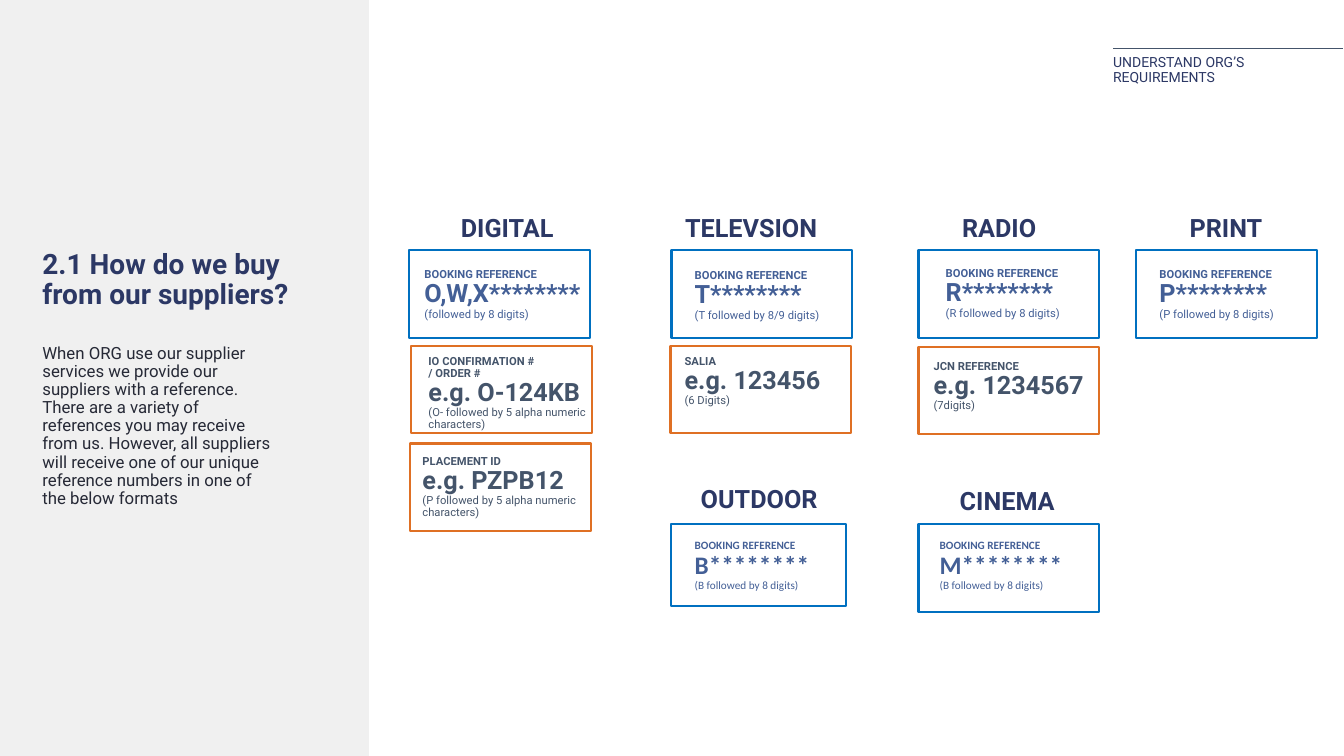
"""Build the slide on supplier booking references."""
from copy import deepcopy
from dataclasses import dataclass

from lxml import etree
from pptx import Presentation
from pptx.dml.color import RGBColor
from pptx.enum.shapes import MSO_CONNECTOR, MSO_SHAPE
from pptx.enum.text import MSO_ANCHOR, MSO_AUTO_SIZE, PP_ALIGN
from pptx.oxml.ns import qn
from pptx.slide import Slide
from pptx.text.text import TextFrame
from pptx.util import Inches, Pt

LINE = MSO_CONNECTOR.STRAIGHT
RECT = MSO_SHAPE.RECTANGLE
TOP, MIDDLE = MSO_ANCHOR.TOP, MSO_ANCHOR.MIDDLE
LEFT, CENTER = PP_ALIGN.LEFT, PP_ALIGN.CENTER
FIXED = MSO_AUTO_SIZE.NONE

NAVY = RGBColor(0x2C, 0x38, 0x65)
INK = RGBColor(0x26, 0x29, 0x36)
SLATE = RGBColor(0x44, 0x54, 0x6A)
STEEL = RGBColor(0x43, 0x5F, 0x96)
BLUE = RGBColor(0x00, 0x70, 0xC0)
ORANGE = RGBColor(0xDF, 0x70, 0x24)
GREY = RGBColor(0xF0, 0xF0, 0xF0)


@dataclass
class Head:
    """A media heading and its place."""
    text: str
    x: float
    y: float = 2.14


@dataclass
class Card:
    """A framed reference with its label, code and note."""
    label: str
    code: str
    note: str
    x: float
    y: float
    text_x: float
    text_y: float
    edge: RGBColor = BLUE
    ink: RGBColor = STEEL
    font: str = "Roboto"
    width: float = 1.79
    height: float = 0.87


HEADS = [
    Head("DIGITAL", 4.33), Head("TELEVSION", 6.75),
    Head("RADIO", 9.21), Head("PRINT", 11.46),
    Head("OUTDOOR", 6.83, 4.83), Head("CINEMA", 9.29, 4.85),
]
RULES = [4.31, 6.73, 9.2, 11.44]
BOOK = "BOOKING REFERENCE"
CARDS = [
    Card(BOOK, "O,W,X********", "(followed by 8 digits)", 4.06, 2.48, 4.21, 2.67),
    Card(BOOK, "T********", "(T followed by 8/9 digits)", 6.66, 2.48, 6.89, 2.68),
    Card(BOOK, "R********", "(R followed by 8 digits)", 9.11, 2.48, 9.38, 2.66),
    Card(BOOK, "P********", "(P followed by 8 digits)", 11.27, 2.48, 11.5, 2.67),
    Card("IO CONFIRMATION #\v/ ORDER #", "e.g. O-124KB",
         "(O- followed by 5 alpha numeric characters)",
         4.08, 3.43, 4.25, 3.53, ORANGE, SLATE),
    Card("SALIA", "e.g. 123456", "(6 Digits)",
         6.65, 3.43, 6.79, 3.53, ORANGE, SLATE),
    Card("JCN REFERENCE", "e.g. 1234567", "(7digits)",
         9.11, 3.44, 9.26, 3.58, ORANGE, SLATE),
    Card("PLACEMENT ID", "e.g. PZPB12",
         "(P followed by 5 alpha numeric characters)",
         4.07, 4.4, 4.19, 4.52, ORANGE, SLATE),
    Card(BOOK, "B********", "(B followed by 8 digits)",
         6.66, 5.2, 6.89, 5.36, font="Calibri", width=1.73, height=0.81),
    Card(BOOK, "M********", "(B followed by 8 digits)",
         9.11, 5.2, 9.32, 5.36, font="Calibri"),
]
BODY = (
    "When ORG use our supplier services we provide our suppliers with a "
    "reference. There are a variety of references you may receive from us. "
    "However, all suppliers will receive one of our unique reference numbers "
    "in one of the below formats"
)


def write(frame: TextFrame, text: str, size: float, ink: RGBColor,
          bold: bool = False, align: PP_ALIGN = LEFT,
          anchor: MSO_ANCHOR = TOP, font: str = "Roboto") -> None:
    """Fill a frame with one paragraph of formatted text."""
    frame.text = text
    frame.word_wrap = True
    frame.auto_size = FIXED
    frame.vertical_anchor = anchor
    frame.margin_left = frame.margin_right = 0
    frame.margin_top = frame.margin_bottom = 0
    para = frame.paragraphs[0]
    para.alignment = align
    para.line_spacing = 0.9
    para.space_before = Pt(6)
    for run in para.runs:
        run.font.name = font
        run.font.size = Pt(size)
        run.font.bold = bold
        run.font.color.rgb = ink


def add_text(slide: Slide, x: float, y: float, w: float, h: float) -> TextFrame:
    """Add a text box and return its frame."""
    box = slide.shapes.add_textbox(Inches(x), Inches(y), Inches(w), Inches(h))
    return box.text_frame


def add_rule(slide: Slide, x: float, y: float, end: float, ink: RGBColor) -> None:
    """Draw a thin level line."""
    rule = slide.shapes.add_connector(
        LINE, Inches(x), Inches(y), Inches(end), Inches(y))
    rule.line.color.rgb = ink
    rule.line.width = Pt(0.5)
    etree.SubElement(rule._element.spPr, qn("a:effectLst"))


def add_card(slide: Slide, card: Card) -> None:
    """Draw a reference with its frame."""
    frame = add_text(slide, card.text_x, card.text_y, 1.83, 0.68)
    text = "\v".join([card.label, card.code, card.note])
    write(frame, text, 8, card.ink, True, font=card.font)
    para = frame.paragraphs[0]
    para.space_after = Pt(3.4)
    code, note = para.runs[-2:]
    code.font.size = Pt(18)
    note.font.bold = False
    for gap in para._p.findall(qn("a:br")):
        gap.append(deepcopy(gap.getprevious().find(qn("a:rPr"))))
    edge = slide.shapes.add_shape(
        RECT, Inches(card.x), Inches(card.y),
        Inches(card.width), Inches(card.height))
    edge.shadow.inherit = False
    edge.fill.background()
    edge.line.color.rgb = card.edge
    edge.line.width = Pt(1.5)


def add_side(slide: Slide) -> None:
    """Draw the side panel with title and body."""
    panel = slide.shapes.add_shape(RECT, 0, 0, Inches(3.66), Inches(7.5))
    panel.shadow.inherit = False
    panel.fill.solid()
    panel.fill.fore_color.rgb = GREY
    panel.line.fill.background()
    slide.shapes._spTree.insert(2, panel._element)

    title, body = slide.shapes.title, slide.placeholders[1]
    title.left, title.top = Inches(0.42), Inches(2.14)
    title.width, title.height = Inches(2.84), Inches(1.28)
    write(title.text_frame, "2.1 How do we buy from our suppliers?",
          20, NAVY, True, anchor=MIDDLE)
    body.left, body.top = Inches(0.42), Inches(3.42)
    body.width, body.height = Inches(2.29), Inches(1.22)
    write(body.text_frame, BODY, 12, INK)
    props = body.text_frame.paragraphs[0]._p.get_or_add_pPr()
    props.set("marL", "0")
    props.set("indent", "0")
    etree.SubElement(props, qn("a:buNone"))


def main() -> None:
    """Build and save the slide."""
    deck = Presentation()
    deck.slide_width, deck.slide_height = Inches(13.33), Inches(7.5)
    slide = deck.slides.add_slide(deck.slide_layouts[1])
    add_side(slide)
    add_rule(slide, 11.04, 0.48, 13.32, SLATE)
    write(add_text(slide, 11.04, 0.52, 2.11, 0.35),
          "UNDERSTAND ORG’S REQUIREMENTS", 10, NAVY, anchor=MIDDLE)
    for head in HEADS:
        write(add_text(slide, head.x, head.y, 1.4, 0.27),
              head.text, 18, NAVY, True, CENTER)
    for x in RULES:
        add_rule(slide, x, 2.48, x + 1.45, NAVY)
    for card in CARDS:
        add_card(slide, card)
    deck.save("out.pptx")


if __name__ == "__main__":
    main()
